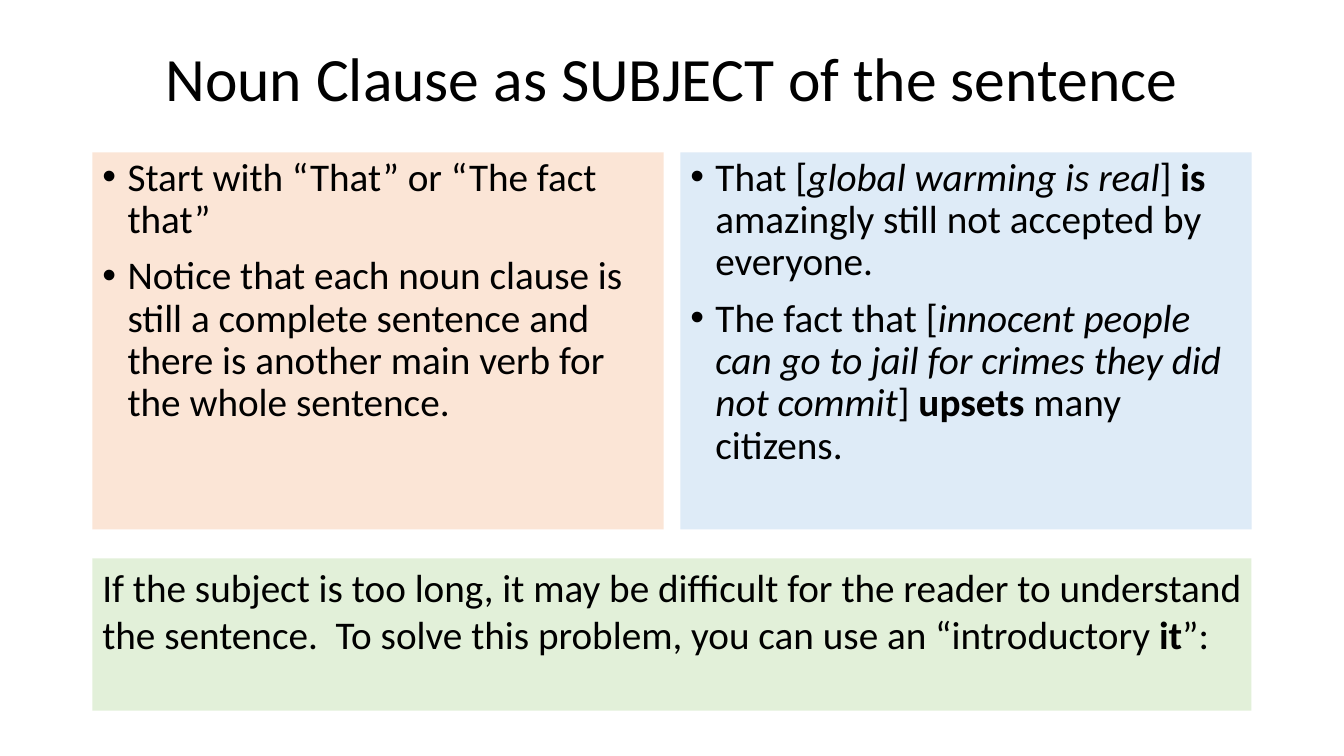
import pptx
import pptx.dml.color
import pptx.enum.text
import pptx.oxml
import pptx.util
from pptx.util import Cm

ITALIC = {"italic": True}
BOLD = {"bold": True}

TITLE = [[("Noun Clause as SUBJECT of the sentence", {})]]
RULES = [
    [("Start with “That” or “The fact that”", {})],
    [("Notice that each noun clause is still a complete sentence and there is "
      "another main verb for the whole sentence.", {})],
]
EXAMPLES = [
    [("That [", {}), ("global warming is real", ITALIC), ("] ", {}),
     ("is", BOLD), (" amazingly still not accepted by everyone.", {})],
    [("The fact that [", {}),
     ("innocent people can go to jail for crimes they did not commit", ITALIC),
     ("] ", {}), ("upsets", BOLD), (" many citizens.", {})],
]
ADVICE = [
    [("If the subject is too long, it may be difficult for the reader to understand "
      "the sentence.  To solve this problem, you can use an “introductory ", {}),
     ("it", BOLD), ("”:", {})],
]


def colour(value):
    """Turn a hex string into a colour."""
    return pptx.dml.color.RGBColor.from_string(value)


def set_all(target, values):
    """Set every attribute named in a dict of format values."""
    for name, value in values.items():
        setattr(target, name, value)


def add_bullet(para):
    """Give a paragraph a round bullet with a hanging indent."""
    properties = para._p.get_or_add_pPr()
    properties.set("marL", str(Cm(0.635)))
    properties.set("indent", str(-Cm(0.635)))
    for tag, name, value in (("buFont", "typeface", "Arial"), ("buChar", "char", "•")):
        bullet = pptx.oxml.parse_xml(
            f'<a:{tag} xmlns:a="http://schemas.openxmlformats.org/drawingml/2006/main" '
            f'{name}="{value}"/>')
        properties.append(bullet)


def add_text(page, box, paragraphs, size=28, fill=None, anchor="TOP",
             para_format=None, bulleted=False):
    """Place a text box with styled paragraphs and an optional fill."""
    shape = page.shapes.add_textbox(*box)
    if fill:
        shape.fill.solid()
        shape.fill.fore_color.rgb = colour(fill)
    frame = shape.text_frame
    set_all(frame, {
        "word_wrap": True,
        "auto_size": pptx.enum.text.MSO_AUTO_SIZE.NONE,
        "vertical_anchor": pptx.enum.text.MSO_ANCHOR[anchor],
    })
    for index, runs in enumerate(paragraphs):
        para = frame.add_paragraph() if index else frame.paragraphs[0]
        set_all(para, para_format or {})
        if bulleted:
            add_bullet(para)
        for text, style in runs:
            span = para.add_run()
            span.text = text
            set_all(span.font, {"name": "Calibri", "size": pptx.util.Pt(size), **style})
            span.font.color.rgb = colour("000000")


def add_title(page, box):
    """Place the centred heading in its box."""
    add_text(page, box, TITLE, size=44, anchor="MIDDLE", para_format={
        "alignment": pptx.enum.text.PP_ALIGN.CENTER, "line_spacing": 0.9})


def add_columns(page, box):
    """Split the box into two equal panels of bullets."""
    left, top, width, height = box
    gap = Cm(0.42)
    column = (width - gap) // 2
    for index, (paragraphs, fill) in enumerate(((RULES, "FBE5D6"), (EXAMPLES, "DEEBF7"))):
        panel = (left + index * (column + gap), top, column, height)
        add_text(page, panel, paragraphs, fill=fill, bulleted=True, para_format={
            "line_spacing": 0.9, "space_before": pptx.util.Pt(10)})


def add_advice(page, box):
    """Place the green advice panel in its box."""
    add_text(page, box, ADVICE, fill="E2F0D9")


def main():
    """Build the slide and save the deck."""
    deck = pptx.Presentation()
    set_all(deck, {"slide_width": Cm(33.87), "slide_height": Cm(19.05)})
    page = deck.slides.add_slide(deck.slide_layouts[6])
    left, width = Cm(2.33), Cm(29.21)
    add_title(page, (left, Cm(1.02), width, Cm(2.06)))
    add_columns(page, (left, Cm(3.84), width, Cm(9.5)))
    add_advice(page, (left, Cm(14.07), width, Cm(3.84)))
    deck.save("out.pptx")


if __name__ == "__main__":
    main()
